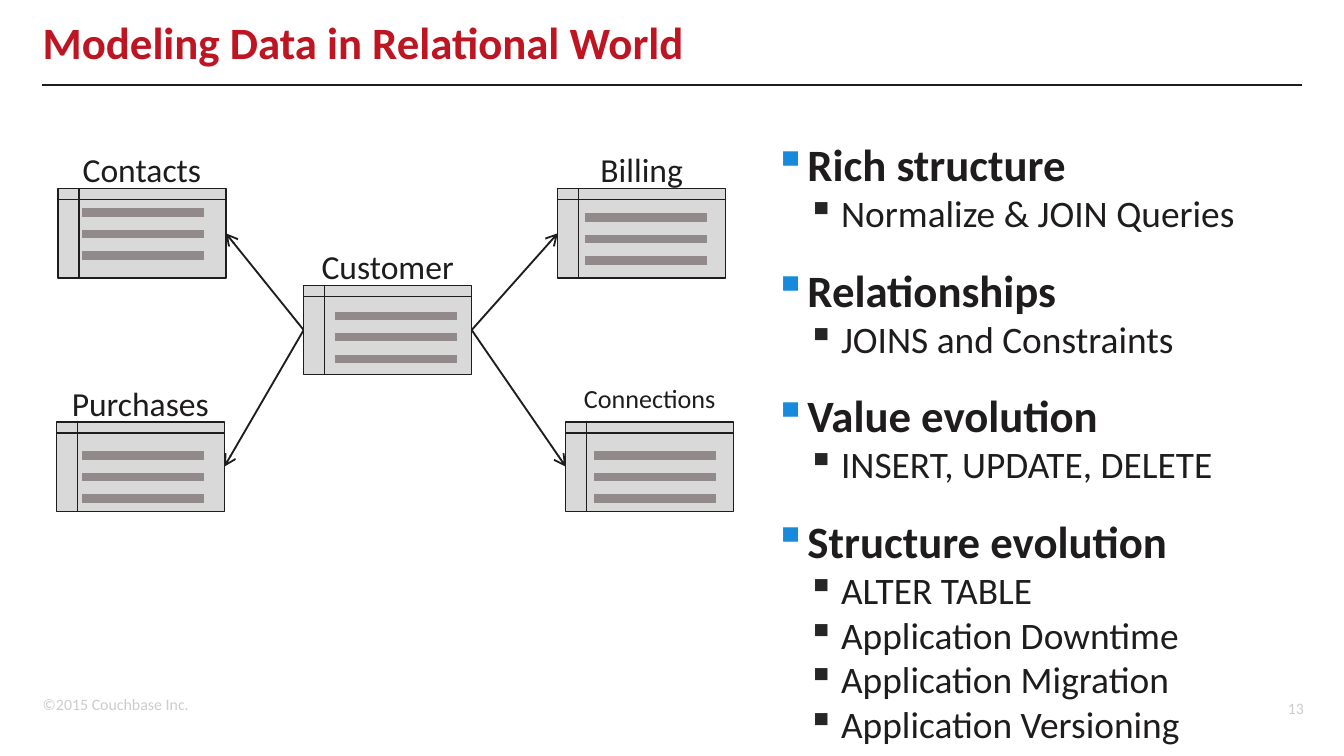
from lxml import etree
from pptx import Presentation
from pptx.dml.color import RGBColor
from pptx.enum.shapes import MSO_CONNECTOR, MSO_SHAPE
from pptx.enum.text import MSO_ANCHOR, PP_ALIGN
from pptx.oxml.ns import qn
from pptx.util import Pt

INK = RGBColor(0x1E, 0x1C, 0x1C)
RED = RGBColor(0xBE, 0x15, 0x23)
BLUE = RGBColor(0x17, 0x8A, 0xDB)
DARK = RGBColor(0x26, 0x26, 0x26)
PALE = RGBColor(0xCC, 0xCC, 0xCC)
TABLE_GRAY = RGBColor(0xD9, 0xD9, 0xD9)
ROW_GRAY = RGBColor(0x92, 0x8A, 0x8A)

STRAIGHT = MSO_CONNECTOR.STRAIGHT
STORAGE = MSO_SHAPE.FLOWCHART_INTERNAL_STORAGE
TOP, MIDDLE = MSO_ANCHOR.TOP, MSO_ANCHOR.MIDDLE
LEFT, CENTER, RIGHT = PP_ALIGN.LEFT, PP_ALIGN.CENTER, PP_ALIGN.RIGHT

TABLE_WIDTH, TABLE_HEIGHT = 90, 48
ROW_WIDTH, ROW_GAP = 65.6, 11.5
LABEL_RISE = 24.6

CUSTOMER = ("Customer", 18, 162.7, 152.8, 179.3, 169.2)
RELATED_TABLES = [
    ("Billing", 18, 298.8, 101, 313.2, 116.6),
    ("Connections", 14, 303.1, 226, 318.2, 244.1),
    ("Purchases", 18, 30.2, 226, 43.9, 244.1),
    ("Contacts", 18, 31, 101, 43.9, 113.8),
]
TOPICS = [
    ("Rich structure", ["Normalize & JOIN Queries"]),
    ("Relationships", ["JOINS and Constraints"]),
    ("Value evolution", ["INSERT, UPDATE, DELETE"]),
    ("Structure evolution", ["ALTER TABLE", "Application Downtime",
                             "Application Migration", "Application Versioning"]),
]


class SlideBuilder:
    font_name = "Calibri"

    def __init__(self, slide):
        self.slide = slide

    def style(self, paragraph, size, color, bold=False):
        font = paragraph.font
        font.name = self.font_name
        font.size = Pt(size)
        font.bold = bold
        font.color.rgb = color

    def frame(self, left, top, width, height, anchor=TOP, wrap=True):
        shape = self.slide.shapes.add_textbox(Pt(left), Pt(top), Pt(width), Pt(height))
        shape.text_frame.word_wrap = wrap
        shape.text_frame.vertical_anchor = anchor
        return shape.text_frame

    def text(self, words, box, size, color, align=LEFT, anchor=TOP,
             bold=False, wrap=True, spacing=None):
        paragraph = self.frame(*box, anchor, wrap).paragraphs[0]
        paragraph.text = words
        paragraph.alignment = align
        paragraph.line_spacing = spacing
        self.style(paragraph, size, color, bold)

    def line(self, start, end, color=INK, weight=1, arrow=False):
        connector = self.slide.shapes.add_connector(
            STRAIGHT, *(Pt(value) for value in (*start, *end)))
        connector.line.color.rgb = color
        connector.line.width = Pt(weight)
        if arrow:
            outline = connector.line._get_or_add_ln()
            etree.SubElement(outline, qn("a:tailEnd"), type="arrow")
        etree.SubElement(connector._element.spPr, qn("a:effectLst"))

    def data_table(self, name, size, left, top, row_left, row_top):
        shape = self.slide.shapes.add_shape(
            STORAGE, Pt(left), Pt(top), Pt(TABLE_WIDTH), Pt(TABLE_HEIGHT))
        shape.shadow.inherit = False
        shape.fill.solid()
        shape.fill.fore_color.rgb = TABLE_GRAY
        shape.line.color.rgb = INK
        shape.line.width = Pt(0.75)
        self.text(name, (left, top - LABEL_RISE, TABLE_WIDTH, size * 1.2 + 7.2),
                  size, INK, CENTER)
        for row in range(3):
            y = row_top + row * ROW_GAP
            self.line((row_left, y), (row_left + ROW_WIDTH, y), ROW_GRAY, 4.5)

    def relation(self, source, target):
        source_left, source_top = source[2:4]
        target_left, target_top = target[2:4]
        if target_left > source_left:
            source_left += TABLE_WIDTH
        else:
            target_left += TABLE_WIDTH
        middle = TABLE_HEIGHT / 2
        self.line((source_left, source_top + middle),
                  (target_left, target_top + middle), arrow=True)

    def bullet(self, paragraph, words, level, size, color, bold, spacing):
        paragraph.text = words
        paragraph.level = level
        paragraph.line_spacing = spacing
        properties = paragraph._p.get_or_add_pPr()
        properties.set("marL", str(Pt(18 * (level + 1))))
        properties.set("indent", str(Pt(-18)))
        bullet_color = etree.SubElement(properties, qn("a:buClr"))
        etree.SubElement(bullet_color, qn("a:srgbClr"), val=str(color))
        etree.SubElement(properties, qn("a:buChar"), char="▪")
        self.style(paragraph, size, INK, bold)

    def topics(self, topics, box):
        frame = self.frame(*box)
        paragraph = frame.paragraphs[0]
        for index, (heading, details) in enumerate(topics):
            if index:
                paragraph = frame.add_paragraph()
            self.bullet(paragraph, heading, 0, 24, BLUE, True, 1.5)
            for detail in details:
                self.bullet(frame.add_paragraph(), detail, 1, 20, DARK, False, 1.0)


def main():
    presentation = Presentation()
    presentation.slide_width = Pt(720)
    presentation.slide_height = Pt(405)
    slide = presentation.slides.add_slide(presentation.slide_layouts[6])
    builder = SlideBuilder(slide)

    builder.text("©2015 Couchbase Inc.", (15.8, 368.6, 93, 17.3), 8.5, PALE, wrap=False)
    builder.text("13", (647.3, 368.6, 58.3, 21.6), 8.5, PALE, RIGHT, MIDDLE)
    builder.line((22.5, 45.5), (697.5, 45.5))
    builder.text("Modeling Data in Relational World", (15.8, 3.6, 630, 42.5),
                 24, RED, anchor=MIDDLE, bold=True, spacing=0.8)

    for table in RELATED_TABLES:
        builder.data_table(*table)
        builder.relation(CUSTOMER, table)
    builder.data_table(*CUSTOMER)

    builder.topics(TOPICS, (407.5, 55.4, 302.4, 329))
    presentation.save("out.pptx")


if __name__ == "__main__":
    main()
